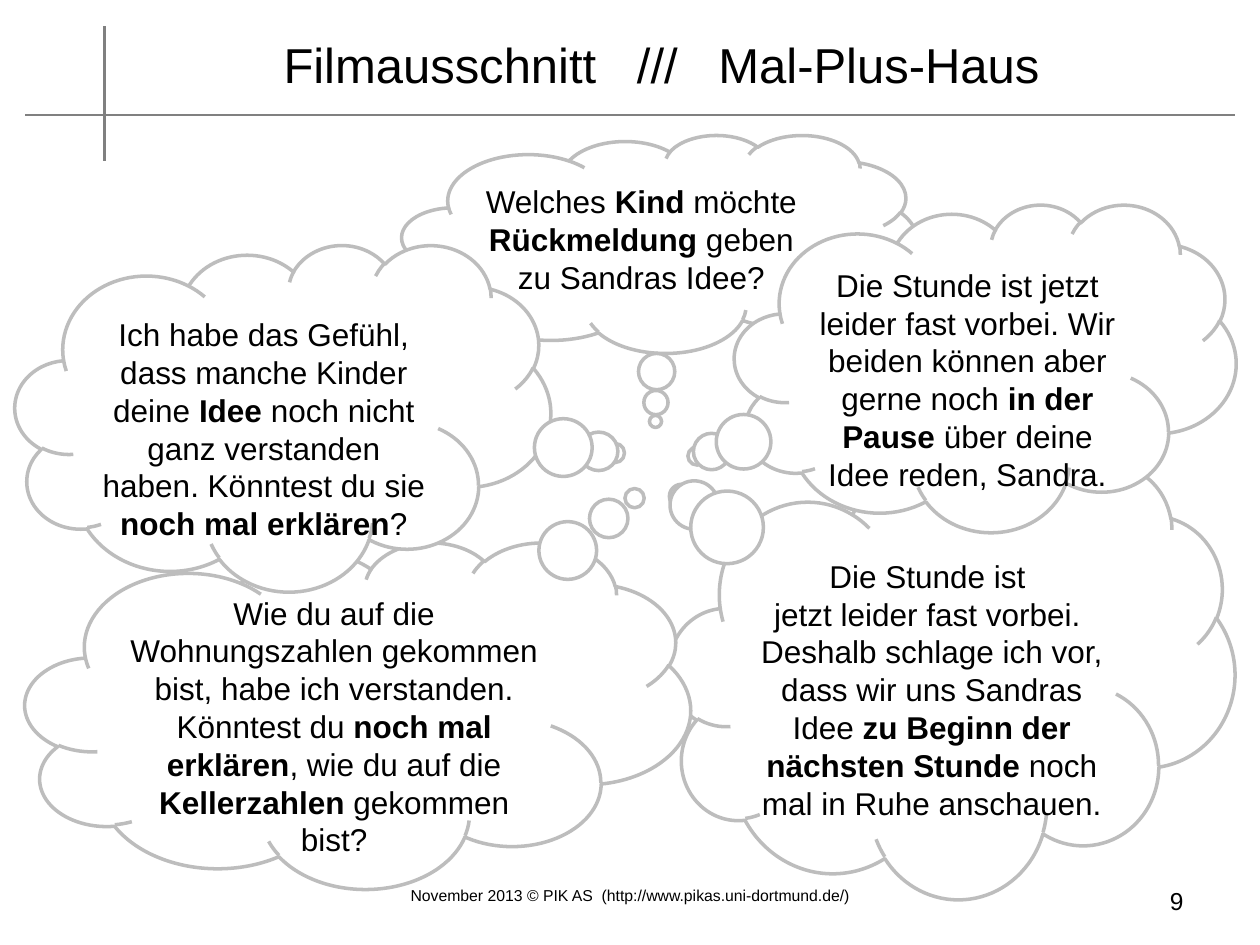
from lxml.etree import SubElement
from pptx import Presentation
from pptx.dml.color import RGBColor
from pptx.enum.shapes import MSO_CONNECTOR, MSO_SHAPE
from pptx.enum.text import MSO_ANCHOR, PP_ALIGN
from pptx.oxml.ns import qn
from pptx.util import Inches, Pt

# The page is a grid of 100 columns by 75 rows of square cells.
CELL = Inches(0.1)
COLUMNS, ROWS = 100, 75

BLACK = RGBColor(0x00, 0x00, 0x00)
WHITE = RGBColor(0xFF, 0xFF, 0xFF)
RULE_GREY = RGBColor(0x80, 0x80, 0x80)
CLOUD_GREY = RGBColor(0xBD, 0xBD, 0xBD)
FONT = "Arial"

TITLE = "Filmausschnitt   ///   Mal-Plus-Haus"
FOOTER = "November 2013 © PIK AS  (http://www.pikas.uni-dortmund.de/)"
PAGE_NUMBER = "9"

# Box, tail offset, rows the text is pushed down, paragraphs (*bold*).
CLOUDS = [
    ((31.9, 10.7, 40.9, 17.3), (-0.008, 0.815), 0,
     ["Welches *Kind* möchte *Rückmeldung* geben zu Sandras Idee?"]),
    ((53.1, 36.7, 44.9, 34.6), (-0.478, -0.422), 3,
     ["Die Stunde ist ",
      "jetzt leider fast vorbei. ",
      "Deshalb schlage ich vor, dass wir uns Sandras Idee "
      "*zu Beginn der nächsten Stunde* noch mal in Ruhe anschauen."]),
    ((58.3, 16.2, 39.8, 26), (-0.575, 0.269), 3,
     ["Die Stunde ist jetzt leider fast vorbei. Wir beiden können aber "
      "gerne noch *in der Pause* über deine Idee reden, Sandra."]),
    ((2, 43, 52.8, 27.5), (0.416, -0.626), 3,
     ["Wie du auf die Wohnungszahlen gekommen bist, habe ich verstanden.\n"
      "Könntest du *noch mal erklären*, wie du auf die *Kellerzahlen* "
      "gekommen bist?"]),
    ((1.2, 19.4, 42.5, 27.5), (0.62, 0.102), 3,
     ["Ich habe das Gefühl, dass manche Kinder deine *Idee* noch nicht "
      "ganz verstanden haben. Könntest du sie *noch mal erklären*?"]),
]


def cells(*counts):
    """Turn numbers of grid cells into lengths."""
    return [round(count * CELL) for count in counts]


def style_font(font, size):
    font.name = FONT
    font.size = Pt(size)
    font.color.rgb = BLACK


def add_rule(page, start, end):
    rule = page.shapes.add_connector(MSO_CONNECTOR.STRAIGHT, *cells(*start, *end))
    rule.line.color.rgb = RULE_GREY
    rule.line.width = Pt(1.25)
    SubElement(rule._element.spPr, qn("a:effectLst"))


def add_label(page, box, text, size, align, anchor=MSO_ANCHOR.TOP):
    label = page.shapes.add_textbox(*cells(*box))
    frame = label.text_frame
    frame.word_wrap = True
    frame.vertical_anchor = anchor
    frame.text = text
    para = frame.paragraphs[0]
    para.alignment = align
    style_font(para.runs[0].font, size)


def add_marked_text(para, text):
    """Fill a paragraph, setting the parts between asterisks in bold."""
    for index, part in enumerate(text.split("*")):
        for number, line in enumerate(part.split("\n")):
            if number:
                para.add_line_break()
            span = para.add_run()
            span.text = line
            style_font(span.font, 18)
            span.font.bold = index % 2 == 1


def add_cloud(page, box, tail, push, texts):
    cloud = page.shapes.add_shape(MSO_SHAPE.CLOUD_CALLOUT, *cells(*box))
    cloud.shadow.inherit = False
    cloud.adjustments[0], cloud.adjustments[1] = tail
    cloud.fill.solid()
    cloud.fill.fore_color.rgb = WHITE
    cloud.line.color.rgb = CLOUD_GREY
    cloud.line.width = Pt(2)
    frame = cloud.text_frame
    frame.word_wrap = True
    frame.vertical_anchor = MSO_ANCHOR.MIDDLE
    frame.margin_top, frame.margin_bottom = cells(0.5 + push, 0.5)
    for index, text in enumerate(texts):
        para = frame.add_paragraph() if index else frame.paragraphs[0]
        para.alignment = PP_ALIGN.CENTER
        add_marked_text(para, text)


def add_header(page):
    add_rule(page, (2, 9.1), (98, 9.1))
    add_rule(page, (8.3, 2.1), (8.3, 12.8))
    add_label(page, (10, 1.7, 85, 6.7), TITLE, 28, PP_ALIGN.CENTER,
              MSO_ANCHOR.MIDDLE)


def add_footer(page):
    add_label(page, (25.6, 69.8, 48.8, 5.2), FOOTER, 9, PP_ALIGN.CENTER)
    add_label(page, (72, 69.8, 22.9, 5.2), PAGE_NUMBER, 14, PP_ALIGN.RIGHT)


def main():
    deck = Presentation()
    deck.slide_width, deck.slide_height = cells(COLUMNS, ROWS)
    page = deck.slides.add_slide(deck.slide_layouts[6])
    add_header(page)
    for cloud in CLOUDS:
        add_cloud(page, *cloud)
    add_footer(page)
    deck.save("out.pptx")


if __name__ == "__main__":
    main()
